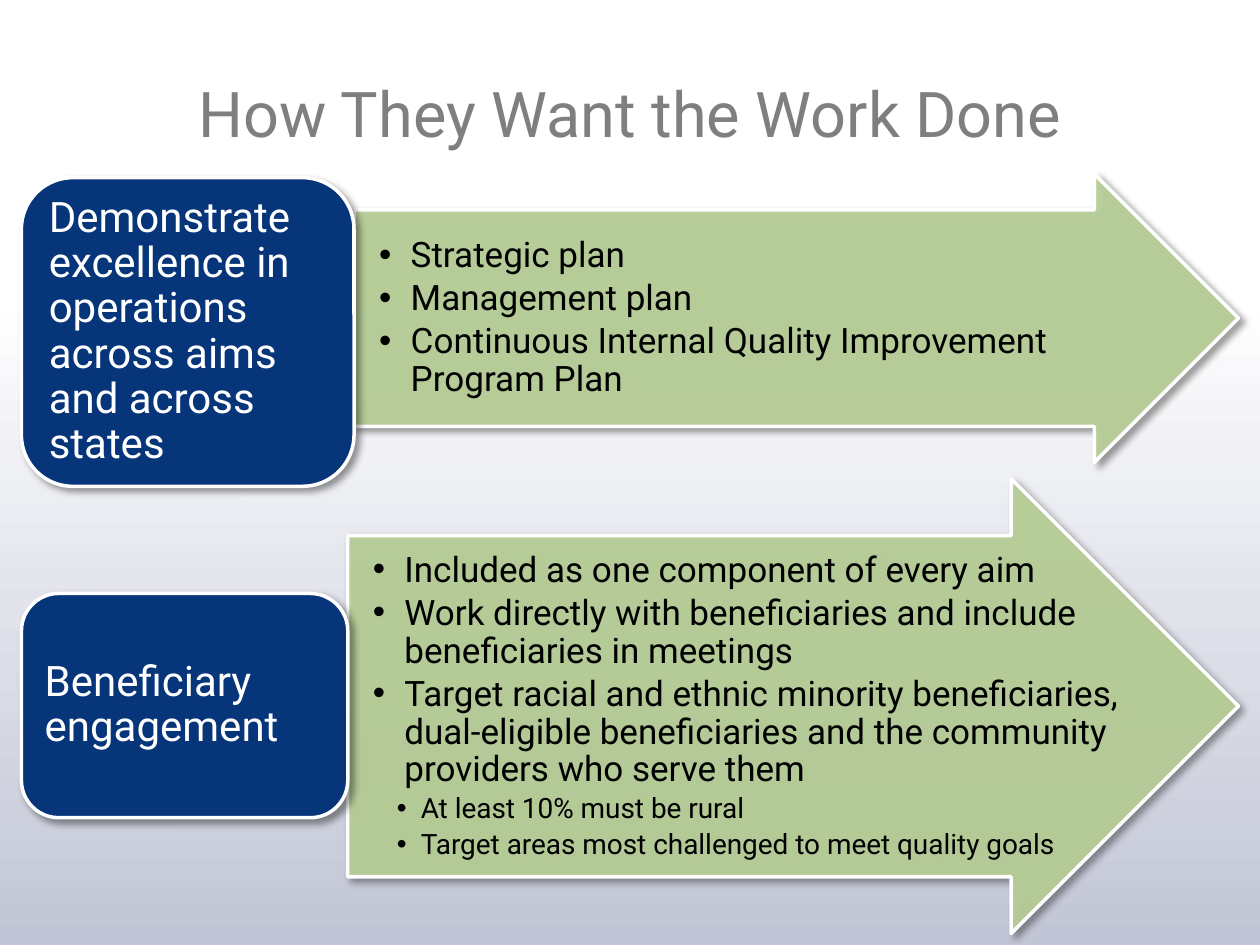
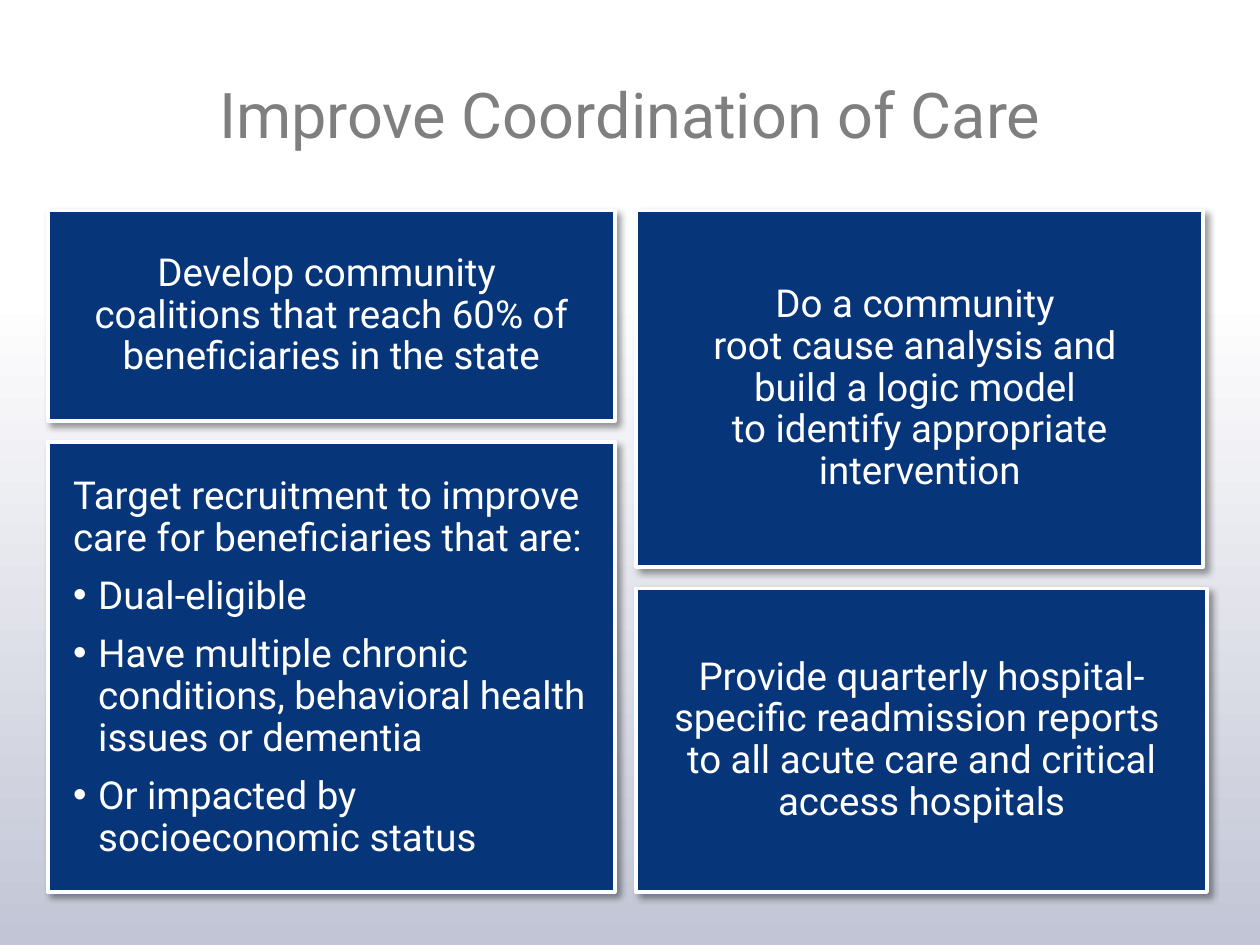
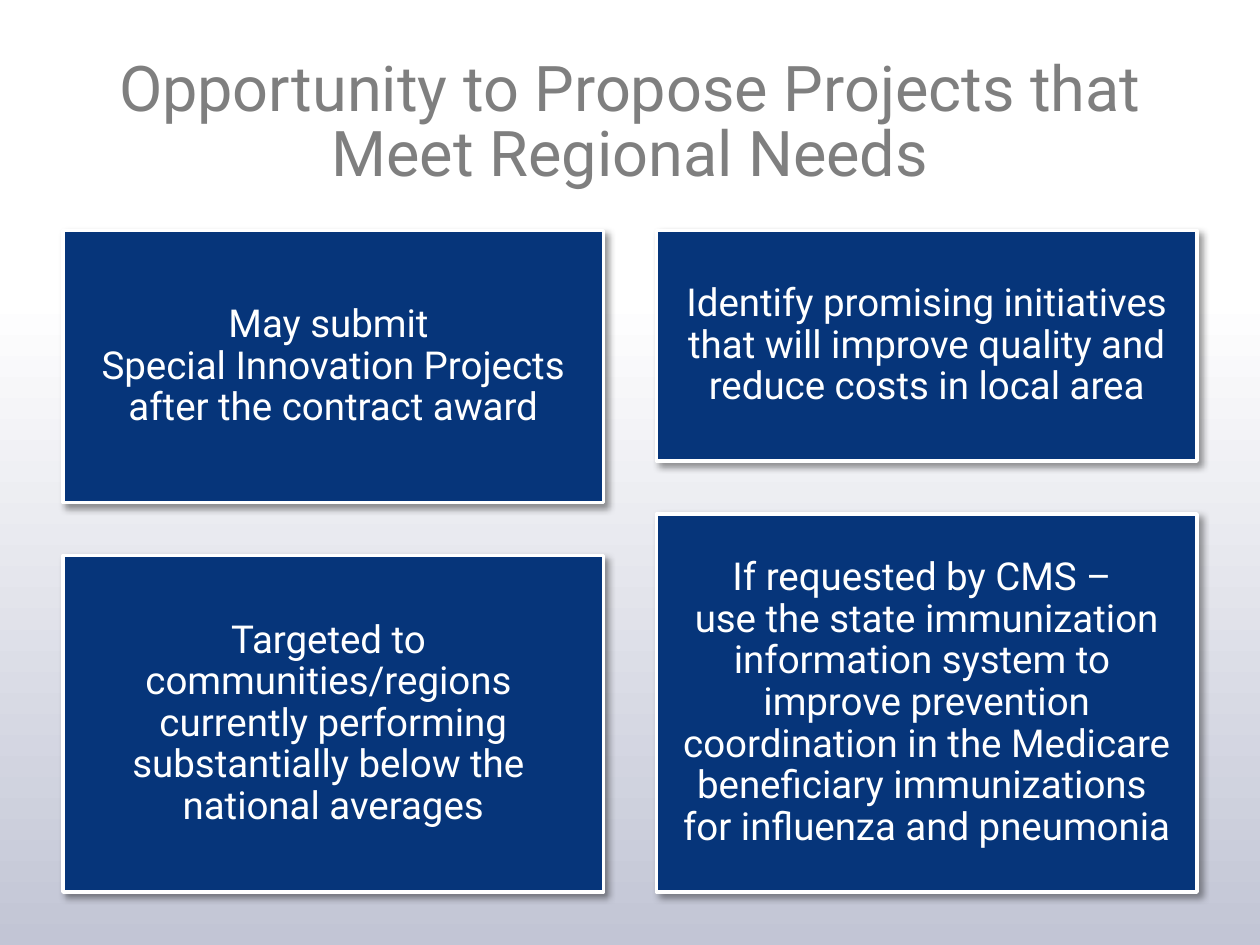
from lxml import etree
from pptx import Presentation
from pptx.dml.color import RGBColor
from pptx.enum.shapes import MSO_SHAPE
from pptx.enum.text import MSO_ANCHOR, MSO_AUTO_SIZE, PP_ALIGN
from pptx.oxml.ns import qn
from pptx.util import Inches, Pt

RECT, ROUNDED = MSO_SHAPE.RECTANGLE, MSO_SHAPE.ROUNDED_RECTANGLE
TOP, MIDDLE = MSO_ANCHOR.TOP, MSO_ANCHOR.MIDDLE
LEFT, CENTER = PP_ALIGN.LEFT, PP_ALIGN.CENTER
NO_AUTOFIT = MSO_AUTO_SIZE.NONE

FONT = "Roboto"
NAVY, GREEN, WHITE, BLACK = "06357A", "B9D198", "FFFFFF", "000000"
TITLE_GRAY, BG_BOTTOM = "7F7F7F", "C2C5D5"
TITLE_ONLY = 5
TILE_SIZE = 22


def rgb(hex_color):
    return RGBColor.from_string(hex_color)


def set_background(master):
    fill = master.background.fill
    fill.gradient()
    fill.gradient_angle = 270
    for stop, color, position in zip(fill.gradient_stops, (WHITE, BG_BOTTOM), (0.31, 1)):
        stop.color.rgb = rgb(color)
        stop.position = position


def add_slide(prs, title, top, line_spacing=None):
    s = prs.slides.add_slide(prs.slide_layouts[TITLE_ONLY])
    sp = s.shapes.title
    sp.left, sp.top, sp.width, sp.height = map(Inches, (0.5, top, 9, 1.25))
    tf = sp.text_frame
    tf.text = title
    tf.auto_size = NO_AUTOFIT
    tf.vertical_anchor = TOP
    p = tf.paragraphs[0]
    p.alignment = CENTER
    p.line_spacing = line_spacing
    style_runs(p, 36, TITLE_GRAY)
    return s


def style_runs(p, size, color):
    for r in p.runs:
        r.font.name = FONT
        r.font.size = Pt(size)
        r.font.color.rgb = rgb(color)


def style_shape(sp, color, opacity=100):
    """Solid fill, white outline and a soft shadow to the lower right."""
    sp.fill.solid()
    sp.fill.fore_color.rgb = rgb(color)
    if opacity < 100:
        clr = sp.fill._xPr.find(qn("a:solidFill"))[0]
        etree.SubElement(clr, qn("a:alpha"), val=str(opacity * 1000))
    sp.line.color.rgb = rgb(WHITE)
    sp.line.width = Pt(2)
    sp.shadow.inherit = False
    effects = sp._element.spPr.find(qn("a:effectLst"))
    shadow = etree.SubElement(effects, qn("a:outerShdw"), blurRad=str(Pt(4)), dist=str(Pt(3)),
                              dir=str(45 * 60000), algn="tl", rotWithShape="0")
    clr = etree.SubElement(shadow, qn("a:srgbClr"), val=BLACK)
    etree.SubElement(clr, qn("a:alpha"), val="40000")


def add_box(s, shape, left, top, width, height):
    sp = s.shapes.add_shape(shape, *map(Inches, (left, top, width, height)))
    style_shape(sp, NAVY)
    return sp


def add_arrow(s, left, top, width, height):
    """Block arrow whose text area is its whole bounding box."""
    neck, edge = left + width - height / 2, height / 8
    right, bottom = left + width, top + height
    points = [(left, top + edge), (neck, top + edge), (neck, top), (right, top + height / 2),
              (neck, bottom), (neck, bottom - edge), (left, bottom - edge)]
    points = [(Inches(x), Inches(y)) for x, y in points]
    builder = s.shapes.build_freeform(*points[0])
    builder.add_line_segments(points[1:])
    sp = builder.convert_to_shape()
    style_shape(sp, GREEN, 90)
    return sp


def set_bullet(p, level, indent, hanging):
    p.level = level
    pPr = p._p.get_or_add_pPr()
    pPr.set("marL", str(Inches(indent)))
    pPr.set("indent", str(-Inches(hanging)))
    etree.SubElement(pPr, qn("a:buFont"), typeface="Arial")
    etree.SubElement(pPr, qn("a:buChar"), char="•")


def fill_text(sp, lines, size, color=WHITE, align=LEFT, insets=(0.09,) * 4, spacing=0.9, after=0):
    tf = sp.text_frame
    tf.text = "\n".join(lines)
    tf.word_wrap = True
    tf.vertical_anchor = MIDDLE
    tf.margin_left, tf.margin_top, tf.margin_right, tf.margin_bottom = map(Inches, insets)
    for p in tf.paragraphs:
        p.alignment = align
        p.line_spacing = spacing
        p.space_after = Pt(after)
        style_runs(p, size, color)
    return tf.paragraphs


def add_label(s, text, left, top, width, height):
    sp = add_box(s, ROUNDED, left, top, width, height)
    fill_text(sp, [text], 24, insets=(0.1, 0.05, 0.1, 0.05))


def add_bullet_arrow(s, box, insets, bullets, sub_bullets=()):
    lines = [*bullets, *sub_bullets]
    paragraphs = fill_text(add_arrow(s, *box), lines, 20, BLACK, insets=insets, after=3)
    for p in paragraphs[:len(bullets)]:
        set_bullet(p, 1, 0.25, 0.25)
    for p in paragraphs[len(bullets):]:
        set_bullet(p, 2, 0.38, 0.19)
        style_runs(p, 16, BLACK)


def add_tiles(s, left, top, width, gap, columns):
    """Two tiles per column, down to a common bottom; columns holds (first height, texts)."""
    bottom, tiles = 7.08, []
    for i, (first_height, texts) in enumerate(columns):
        x = left + i * (width + gap)
        second_top = top + first_height + gap
        spans = [(top, first_height), (second_top, bottom - second_top)]
        for (y, height), lines in zip(spans, texts):
            sp = add_box(s, RECT, x, y, width, height)
            fill_text(sp, lines, TILE_SIZE, align=CENTER)
            tiles.append(sp)
    return tiles


def build_work_slide(prs):
    s = add_slide(prs, "How They Want the Work Done", 0.54)
    add_bullet_arrow(s, (2.81, 1.38, 7.02, 2.29), (0.2, 0.3, 0.87, 0.3), [
        "Strategic plan",
        "Management plan",
        "Continuous Internal Quality Improvement Program Plan"])
    add_label(s, "Demonstrate excellence in operations across aims and across states",
              0.17, 1.41, 2.64, 2.45)
    add_bullet_arrow(s, (2.76, 3.8, 7.07, 3.61), (0.2, 0.47, 0.5, 0.47), [
        "Included as one component of every aim",
        "Work directly with beneficiaries and include beneficiaries in meetings",
        "Target racial and ethnic minority beneficiaries, dual-eligible beneficiaries "
        "and the community providers who serve them"],
        ["At least 10% must be rural", "Target areas most challenged to meet quality goals"])
    add_label(s, "Beneficiary engagement", 0.17, 4.71, 2.59, 1.78)


def build_care_slide(prs):
    s = add_slide(prs, "Improve Coordination of Care", 0.55)
    recruitment = [
        "Target recruitment to improve care for beneficiaries that are:",
        "Dual-eligible",
        "Have multiple chronic conditions, behavioral health issues or dementia",
        "Or impacted by \vsocioeconomic status"]
    tiles = add_tiles(s, 0.38, 1.67, 4.5, 0.17, [
        (1.67, [["Develop community ", "coalitions that reach 60% of beneficiaries in the state"],
                recruitment]),
        (2.83, [["Do a community \vroot cause analysis and \vbuild a logic model "
                 "\vto identify appropriate intervention"],
                ["Provide quarterly hospital-\vspecific readmission reports "
                 "\vto all acute care and critical access hospitals"]])])
    paragraphs = fill_text(tiles[1], recruitment, TILE_SIZE, insets=(0.2, 0, 0.09, 0),
                           spacing=Pt(24), after=9)
    for p in paragraphs[1:]:
        set_bullet(p, 1, 0.2, 0.2)
    tiles[3].width = Inches(4.53)


def build_projects_slide(prs):
    s = add_slide(prs, "Opportunity to Propose Projects that Meet Regional Needs", 0.42, Pt(37))
    add_tiles(s, 0.5, 1.83, 4.29, 0.42, [
        (2.16, [["May submit \vSpecial Innovation Projects after the contract award"],
                ["Targeted to \vcommunities/regions \vcurrently performing substantially "
                 "below the \vnational averages"]]),
        (1.83, [["Identify promising initiatives that will improve quality and reduce costs "
                 "in local area"],
                ["If requested by CMS – \vuse the state immunization information system to "
                 "\vimprove prevention coordination in the Medicare beneficiary immunizations "
                 "\vfor influenza and pneumonia"]])])


def main():
    prs = Presentation()
    prs.slide_width, prs.slide_height = Inches(10), Inches(7.5)
    set_background(prs.slide_master)
    build_work_slide(prs)
    build_care_slide(prs)
    build_projects_slide(prs)
    prs.save("out.pptx")


if __name__ == "__main__":
    main()
